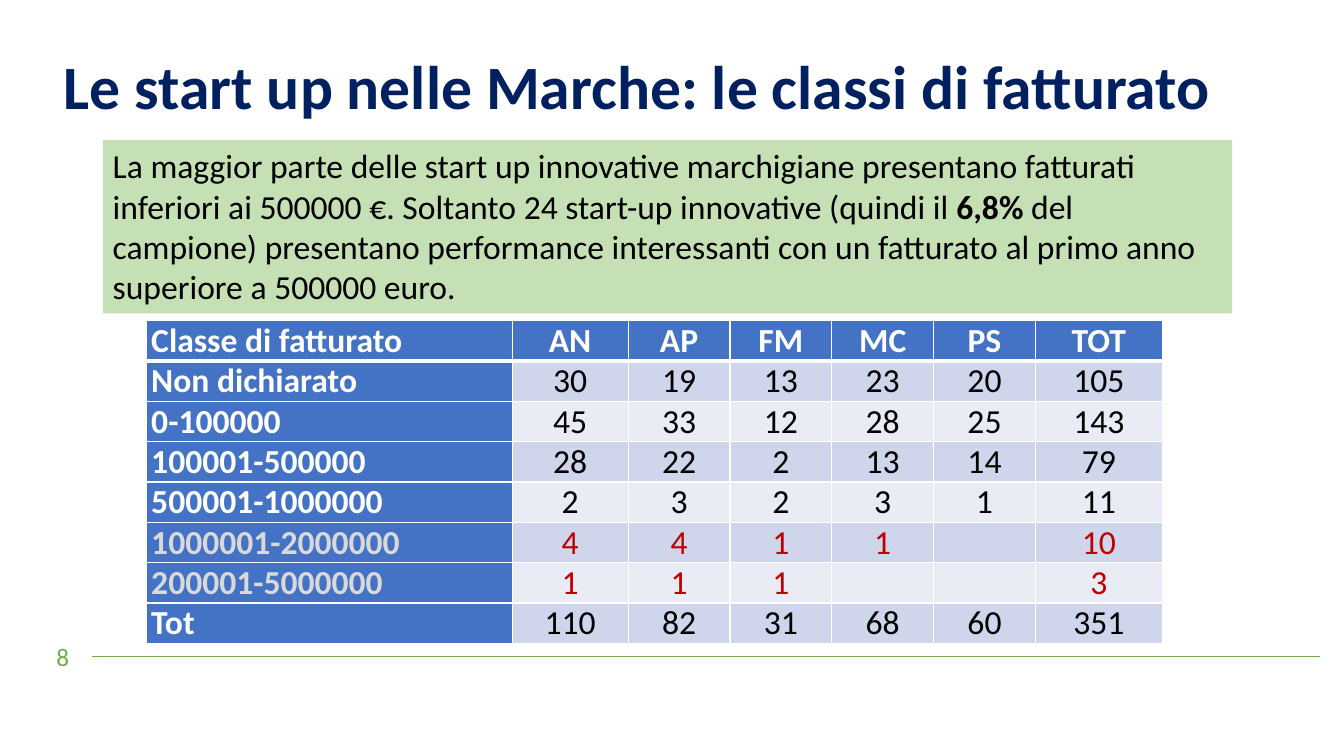
from dataclasses import dataclass

from lxml.etree import SubElement
from pptx import Presentation
from pptx.dml.color import RGBColor
from pptx.enum.shapes import MSO_CONNECTOR, MSO_SHAPE
from pptx.enum.text import MSO_ANCHOR, PP_ALIGN
from pptx.oxml.ns import qn
from pptx.slide import Slide
from pptx.table import _Cell
from pptx.text.text import _Paragraph
from pptx.util import Inches, Pt


@dataclass(frozen=True)
class Theme:
    font: str = "Calibri"
    title_size: int = 44
    body_size: int = 24
    number_size: int = 18
    navy: str = "002060"
    green: str = "70AD47"
    pale_green: str = "C5E0B4"
    blue: str = "4472C4"
    bands: tuple[str, str] = ("CFD5EA", "E9EBF5")
    white: str = "FFFFFF"
    grey: str = "D9D9D9"
    black: str = "000000"
    red: str = "C00000"


@dataclass(frozen=True)
class TurnoverClass:
    label: str
    counts: tuple[str, ...]
    highlighted: bool = False


@dataclass(frozen=True)
class Box:
    left: float
    top: float
    width: float
    height: float

    def lengths(self) -> tuple[Inches, Inches, Inches, Inches]:
        return Inches(self.left), Inches(self.top), Inches(self.width), Inches(self.height)


THEME = Theme()
PROVINCES = ("AN", "AP", "FM", "MC", "PS", "TOT")
CLASSES = (
    TurnoverClass("Non dichiarato", ("30", "19", "13", "23", "20", "105")),
    TurnoverClass("0-100000", ("45", "33", "12", "28", "25", "143")),
    TurnoverClass("100001-500000", ("28", "22", "2", "13", "14", "79")),
    TurnoverClass("500001-1000000", ("2", "3", "2", "3", "1", "11")),
    TurnoverClass("1000001-2000000", ("4", "4", "1", "1", "", "10"), True),
    TurnoverClass("200001-5000000", ("1", "1", "1", "", "", "3"), True),
    TurnoverClass("Tot", ("110", "82", "31", "68", "60", "351")),
)
COLUMN_WIDTHS = (3.63, 1.15, 1.01, 1.01, 1.01, 1.01, 1.26)
ROW_HEIGHT = 0.4


def rgb(color: str) -> RGBColor:
    return RGBColor.from_string(color)


def style(paragraph: _Paragraph, size: int, color: str, bold: bool | None = False) -> None:
    """Set the font; bold=None leaves the weight to the runs."""
    font = paragraph.font
    font.name, font.size, font.bold = THEME.font, Pt(size), bold
    font.color.rgb = rgb(color)


def add_text(slide: Slide, box: Box, text: str, size: int, color: str,
             bold: bool = False) -> _Paragraph:
    frame = slide.shapes.add_textbox(*box.lengths()).text_frame
    frame.word_wrap = True
    paragraph = frame.paragraphs[0]
    paragraph.text = text
    style(paragraph, size, color, bold)
    return paragraph


def add_title(slide: Slide) -> None:
    title = add_text(slide, Box(-0.44, 0.51, 13.53, 0.77),
                     "Le start up nelle Marche: le classi di fatturato",
                     THEME.title_size, THEME.navy, bold=True)
    title.alignment = PP_ALIGN.CENTER
    title.line_spacing = 0.9


def add_footer(slide: Slide) -> None:
    rule = slide.shapes.add_connector(MSO_CONNECTOR.STRAIGHT, Inches(0.91), Inches(6.51),
                                      Inches(13.09), Inches(6.51))
    rule.line.color.rgb = rgb(THEME.green)
    rule.line.width = Pt(0.5)
    SubElement(rule.element.spPr, qn("a:effectLst"))
    add_text(slide, Box(0.46, 6.31, 0.31, 0.4), "8", THEME.number_size, THEME.green)


def add_summary(slide: Slide) -> None:
    panel = slide.shapes.add_shape(MSO_SHAPE.RECTANGLE, *Box(1.02, 1.39, 11.2, 1.72).lengths())
    panel.shadow.inherit = False
    panel.fill.solid()
    panel.fill.fore_color.rgb = rgb(THEME.pale_green)
    panel.line.fill.background()
    panel.text_frame.word_wrap = True
    panel.text_frame.vertical_anchor = MSO_ANCHOR.TOP
    summary = panel.text_frame.paragraphs[0]
    summary.alignment = PP_ALIGN.LEFT
    summary.add_run().text = (
        "La maggior parte delle start up innovative marchigiane presentano fatturati "
        "inferiori ai 500000 €. Soltanto 24 start-up innovative (quindi il ")
    share = summary.add_run()
    share.text = "6,8% "
    share.font.bold = True
    summary.add_run().text = (
        "del campione) presentano performance interessanti con un fatturato "
        "al primo anno superiore a 500000 euro.")
    style(summary, THEME.body_size, THEME.black, bold=None)


def add_borders(cell: _Cell, top: float, bottom: float) -> None:
    """Draw white borders, widths in points; must precede the cell's fill."""
    properties = cell._tc.get_or_add_tcPr()
    for side, width in (("L", 1), ("R", 1), ("T", top), ("B", bottom)):
        line = SubElement(properties, qn(f"a:ln{side}"), w=str(Pt(width)))
        SubElement(SubElement(line, qn("a:solidFill")), qn("a:srgbClr"), val=THEME.white)


def fill_cell(cell: _Cell, text: str, fill: str, color: str, bold: bool,
              alignment: PP_ALIGN) -> None:
    cell.fill.solid()
    cell.fill.fore_color.rgb = rgb(fill)
    cell.margin_left = cell.margin_right = Inches(0.05)
    cell.margin_top = cell.margin_bottom = 0
    cell.vertical_anchor = MSO_ANCHOR.BOTTOM
    paragraph = cell.text_frame.paragraphs[0]
    paragraph.text = text
    paragraph.alignment = alignment
    style(paragraph, THEME.body_size, color, bold)


def add_turnover_table(slide: Slide) -> None:
    rows = (TurnoverClass("Classe di fatturato", PROVINCES), *CLASSES)
    box = Box(1.45, 3.18, sum(COLUMN_WIDTHS), ROW_HEIGHT * len(rows))
    table = slide.shapes.add_table(len(rows), len(COLUMN_WIDTHS), *box.lengths()).table
    table.first_row = table.horz_banding = False
    for column, width in zip(table.columns, COLUMN_WIDTHS):
        column.width = Inches(width)
    for r, row in enumerate(rows):
        table.rows[r].height = Inches(ROW_HEIGHT)
        for c, text in enumerate((row.label, *row.counts)):
            cell = table.cell(r, c)
            heading = r == 0 or c == 0
            if heading:
                fill, color = THEME.blue, THEME.grey if row.highlighted else THEME.white
            else:
                fill = THEME.bands[(r - 1) % 2]
                color = THEME.red if row.highlighted else THEME.black
            add_borders(cell, top=3 if r == 1 else 1, bottom=3 if r == 0 else 1)
            fill_cell(cell, text, fill, color, heading,
                      PP_ALIGN.CENTER if c else PP_ALIGN.JUSTIFY)


def main() -> None:
    presentation = Presentation()
    presentation.slide_width, presentation.slide_height = Inches(13.33), Inches(7.5)
    slide = presentation.slides.add_slide(presentation.slide_layouts[6])
    add_title(slide)
    add_footer(slide)
    add_summary(slide)
    add_turnover_table(slide)
    presentation.save("out.pptx")


if __name__ == "__main__":
    main()
